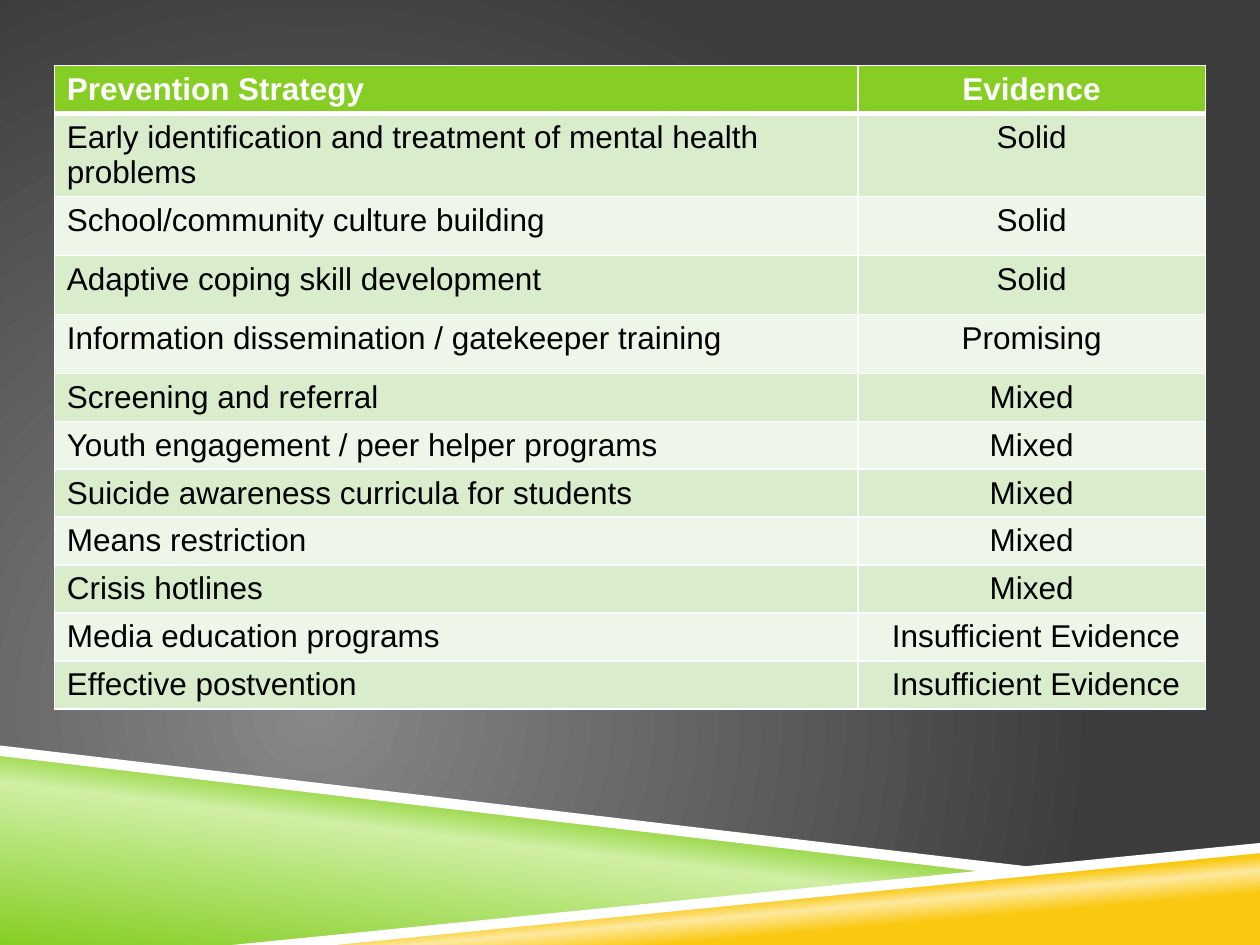
from dataclasses import dataclass

from lxml import etree
from pptx import Presentation
from pptx.dml.color import RGBColor
from pptx.enum.text import PP_ALIGN
from pptx.oxml import parse_xml
from pptx.oxml.ns import nsdecls, qn
from pptx.util import Pt

LEFT, CENTER = PP_ALIGN.LEFT, PP_ALIGN.CENTER


@dataclass(frozen=True)
class Theme:
    """Colours, font and type size of the slide."""
    green: str = "86CE24"
    pale_green: str = "CFEFA4"
    gold: str = "FAC810"
    pale_gold: str = "FDE99F"
    white: str = "FFFFFF"
    black: str = "000000"
    center_gray: str = "878787"
    edge_gray: str = "3D3D3D"
    bands: tuple = ("D9EDCD", "EDF6E8")
    font: str = "Arial"
    size: float = 18


THEME = Theme()
WIDTH, HEIGHT = 720, 540
TABLE_LEFT, TABLE_TOP = 31, 37.4
COLUMN_WIDTHS = (459.2, 198.6)
ROW, TALL_ROW, WRAPPED_ROW = 27.4, 33.7, 47
HAIRLINE, HEADER_RULE = 1, 3

ROWS = (
    ("Prevention Strategy", "Evidence", ROW),
    ("Early identification and treatment of mental health problems", "Solid", WRAPPED_ROW),
    ("School/community culture building", "Solid", TALL_ROW),
    ("Adaptive coping skill development", "Solid", TALL_ROW),
    ("Information dissemination / gatekeeper training", "Promising", TALL_ROW),
    ("Screening and referral", "Mixed", ROW),
    ("Youth engagement / peer helper programs", "Mixed", ROW),
    ("Suicide awareness curricula for students", "Mixed", ROW),
    ("Means restriction", "Mixed", ROW),
    ("Crisis hotlines", "Mixed", ROW),
    ("Media education programs", " Insufficient Evidence", ROW),
    ("Effective postvention", " Insufficient Evidence", ROW),
)

GREEN_STOPS = ((0, THEME.green), (52, THEME.pale_green), (66, THEME.green))
GOLD_STOPS = ((28, THEME.gold), (40, THEME.pale_gold), (48, THEME.gold))
GRAY_STOPS = ((0, THEME.center_gray), (100, THEME.edge_gray))
RADIAL = ('<a:path path="circle"><a:fillToRect l="50000" t="100000" '
          'r="100000" b="50000"/></a:path>')


def linear(degrees):
    """Return the XML of a linear gradient direction."""
    return f'<a:lin ang="{degrees * 60000}" scaled="0"/>'


def set_gradient(fill, element, stops, direction):
    """Fill a background or shape with a gradient."""
    fill.solid()
    solid = element.find(".//" + qn("a:solidFill"))
    marks = "".join(f'<a:gs pos="{pos * 1000}"><a:srgbClr val="{color}"/></a:gs>'
                    for pos, color in stops)
    gradient = parse_xml(f'<a:gradFill {nsdecls("a")} rotWithShape="1">'
                         f'<a:gsLst>{marks}</a:gsLst>{direction}</a:gradFill>')
    solid.getparent().replace(solid, gradient)


def add_polygon(s, points):
    """Add a closed outline without line or shadow."""
    start, *rest = [(Pt(x), Pt(y)) for x, y in points]
    builder = s.shapes.build_freeform(*start)
    builder.add_line_segments(rest, close=True)
    shape = builder.convert_to_shape()
    shape.shadow.inherit = False
    shape.line.fill.background()
    return shape


def add_wedge(s, points, stops, degrees):
    """Add a polygon with a linear gradient."""
    shape = add_polygon(s, points)
    set_gradient(shape.fill, shape.element, stops, linear(degrees))


def add_stripe(s, points):
    """Add a white polygon."""
    shape = add_polygon(s, points)
    shape.fill.solid()
    shape.fill.fore_color.rgb = RGBColor.from_string(THEME.white)


def set_borders(cell, widths):
    """Draw white cell borders from a dict of side and width."""
    tc_pr = cell._tc.get_or_add_tcPr()
    for side, width in widths.items():
        ln = etree.SubElement(tc_pr, qn(f"a:ln{side}"), w=str(Pt(width)))
        solid = etree.SubElement(ln, qn("a:solidFill"))
        etree.SubElement(solid, qn("a:srgbClr"), val=THEME.white)


def format_cell(cell, text, align, color, fill, bold):
    """Write and format one table cell."""
    cell.fill.solid()
    cell.fill.fore_color.rgb = RGBColor.from_string(fill)
    p = cell.text_frame.paragraphs[0]
    p.alignment = align
    r = p.add_run()
    r.text = text
    for name, value in dict(name=THEME.font, size=Pt(THEME.size), bold=bold).items():
        setattr(r.font, name, value)
    r.font.color.rgb = RGBColor.from_string(color)


def add_evidence_table(s):
    """Add the banded table of strategies and evidence."""
    frame = s.shapes.add_table(len(ROWS), len(COLUMN_WIDTHS), Pt(TABLE_LEFT), Pt(TABLE_TOP),
                               Pt(sum(COLUMN_WIDTHS)), Pt(sum(row[-1] for row in ROWS)))
    table = frame.table
    for column, width in zip(table.columns, COLUMN_WIDTHS):
        column.width = Pt(width)
    for i, (*texts, height) in enumerate(ROWS):
        table.rows[i].height = Pt(height)
        header = i == 0
        color = THEME.white if header else THEME.black
        fill = THEME.green if header else THEME.bands[(i - 1) % 2]
        borders = dict(L=HAIRLINE, R=HAIRLINE,
                       T=HEADER_RULE if i == 1 else HAIRLINE,
                       B=HEADER_RULE if header else HAIRLINE)
        for j, (text, align) in enumerate(zip(texts, (LEFT, CENTER))):
            cell = table.cell(i, j)
            set_borders(cell, borders)
            format_cell(cell, text, align, color, fill, header)


def main():
    """Build and save the slide."""
    prs = Presentation()
    prs.slide_width, prs.slide_height = Pt(WIDTH), Pt(HEIGHT)
    s = prs.slides.add_slide(prs.slide_layouts[6])
    set_gradient(s.background.fill, s.element, GRAY_STOPS, RADIAL)
    add_wedge(s, ((0, 430), (570, 498.3), (144, HEIGHT), (0, HEIGHT)), GREEN_STOPS, 277)
    add_wedge(s, ((142.6, HEIGHT), (WIDTH, 484), (WIDTH, HEIGHT)), GOLD_STOPS, 265)
    add_stripe(s, ((0, 426), (0, 432), (569, 499), (599, 496.5)))
    add_stripe(s, ((WIDTH, 481.7), (132.5, HEIGHT), (191.5, HEIGHT), (WIDTH, 487.5)))
    add_evidence_table(s)
    prs.save("out.pptx")


if __name__ == "__main__":
    main()
